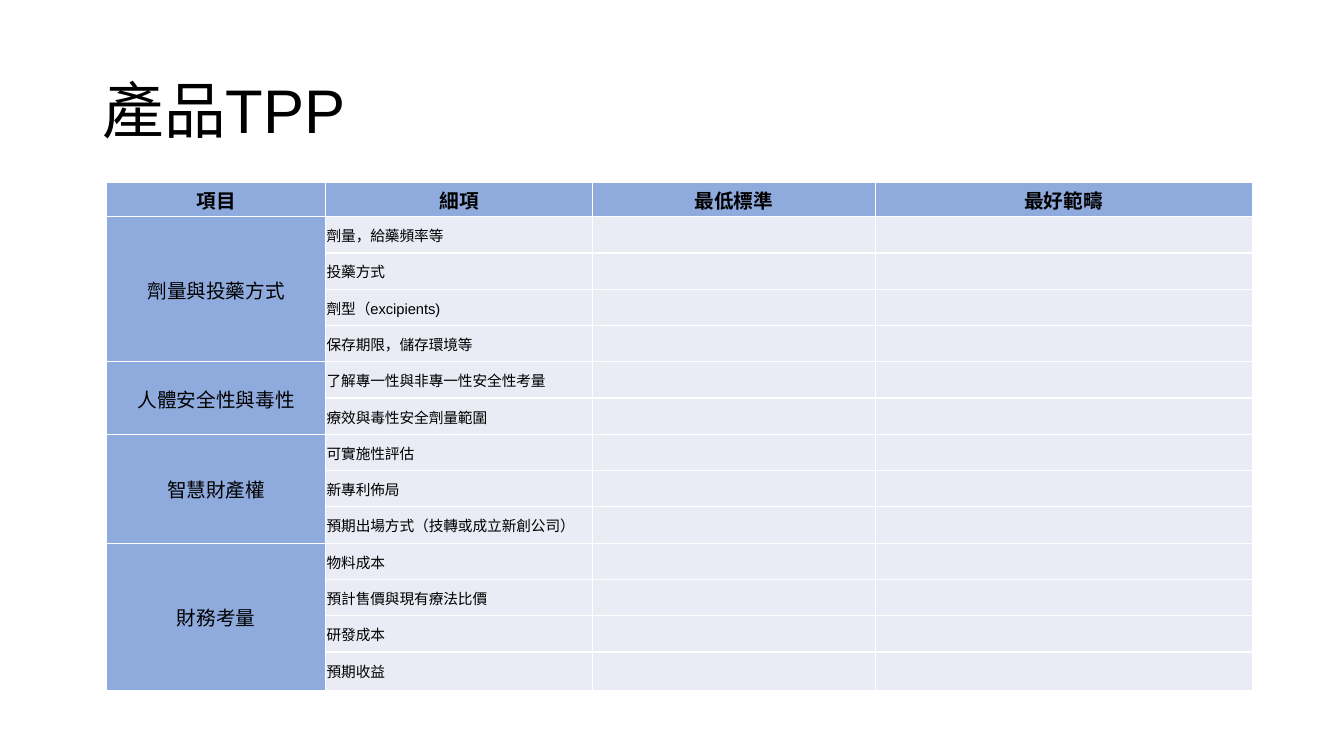
from lxml import etree
from pptx import Presentation
from pptx.dml.color import RGBColor
from pptx.enum.text import MSO_ANCHOR, PP_ALIGN
from pptx.oxml.ns import qn
from pptx.util import Inches, Pt

MIDDLE = MSO_ANCHOR.MIDDLE
LEFT, CENTER = PP_ALIGN.LEFT, PP_ALIGN.CENTER
BLUE, PALE, WHITE, BLACK = "8FAADC", "E9EBF5", "FFFFFF", "000000"

HEADINGS = ["項目", "細項", "最低標準", "最好範疇"]
GROUPS = [
    ("劑量與投藥方式", ["劑量，給藥頻率等", "投藥方式", "劑型（excipients)", "保存期限，儲存環境等"]),
    ("人體安全性與毒性", ["了解專一性與非專一性安全性考量", "療效與毒性安全劑量範圍"]),
    ("智慧財產權", ["可實施性評估", "新專利佈局", "預期出場方式（技轉或成立新創公司）"]),
    ("財務考量", ["物料成本", "預計售價與現有療法比價", "研發成本", "預期收益"]),
]
COLUMN_WIDTHS = [2.17, 2.65, 2.8, 3.74]
ROW_HEIGHTS = [0.34] + [0.36] * 12 + [0.38]


def write(frame, text, size, bold=False, align=LEFT, spacing=None):
    para = frame.paragraphs[0]
    para.alignment = align
    para.line_spacing = spacing
    span = para.add_run()
    span.text = text
    span.font.name = "Arial"
    span.font.size = Pt(size)
    span.font.bold = bold
    span.font.color.rgb = RGBColor.from_string(BLACK)


def style_cell(cell, color):
    cell.margin_left = cell.margin_right = cell.margin_top = Inches(0.01)
    cell.margin_bottom = 0
    cell.vertical_anchor = MIDDLE
    properties = cell._tc.get_or_add_tcPr()
    for side in ("lnL", "lnR", "lnT", "lnB"):
        line = etree.SubElement(properties, qn(f"a:{side}"), w=str(Pt(1)))
        solid = etree.SubElement(line, qn("a:solidFill"))
        etree.SubElement(solid, qn("a:srgbClr"), val=WHITE)
    cell.fill.solid()
    cell.fill.fore_color.rgb = RGBColor.from_string(color)


deck = Presentation()
deck.slide_width, deck.slide_height = Inches(13.33), Inches(7.5)
page = deck.slides.add_slide(deck.slide_layouts[6])

title_box = page.shapes.add_textbox(Inches(0.92), Inches(0.4), Inches(11.5), Inches(1.45))
title_box.text_frame.word_wrap = True
title_box.text_frame.vertical_anchor = MIDDLE
write(title_box.text_frame, "產品TPP", 44, spacing=0.9)

table = page.shapes.add_table(
    len(ROW_HEIGHTS), len(COLUMN_WIDTHS), Inches(1.06), Inches(1.81),
    Inches(sum(COLUMN_WIDTHS)), Inches(sum(ROW_HEIGHTS))).table
table.first_row = table.horz_banding = False
for column, width in zip(table.columns, COLUMN_WIDTHS):
    column.width = Inches(width)
for row_index, height in enumerate(ROW_HEIGHTS):
    table.rows[row_index].height = Inches(height)
    for column_index in range(len(COLUMN_WIDTHS)):
        is_heading = row_index == 0 or column_index == 0
        style_cell(table.cell(row_index, column_index), BLUE if is_heading else PALE)

for column_index, heading in enumerate(HEADINGS):
    write(table.cell(0, column_index).text_frame, heading, 14, bold=True, align=CENTER)

first = 1
for group, details in GROUPS:
    group_cell = table.cell(first, 0)
    group_cell.merge(table.cell(first + len(details) - 1, 0))
    write(group_cell.text_frame, group, 14, align=CENTER)
    for row_index, detail in enumerate(details, first):
        write(table.cell(row_index, 1).text_frame, detail, 10.5)
    first += len(details)

deck.save("out.pptx")
